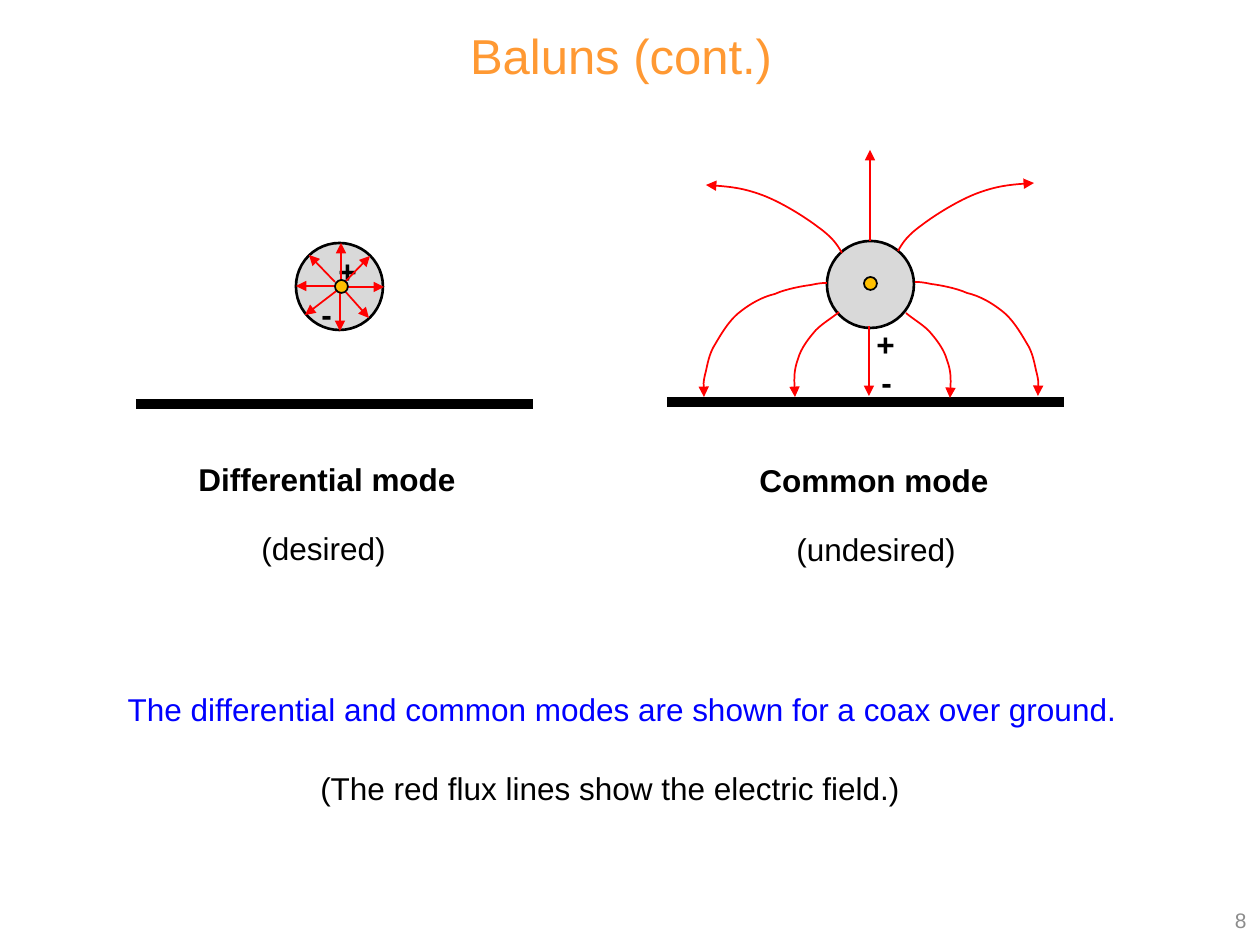
from pptx import Presentation
from pptx.dml.color import RGBColor
from pptx.enum import shapes, text
from pptx.oxml import ns, xmlchemy
from pptx.util import Emu, Pt

SCALE = 914400 / 126
COLORS = {
    "title": "FF9933", "number": "8C8C8C", "ink": "000000", "note": "0000FF",
    "shield": "D9D9D9", "core": "FFC000", "field": "FF0000",
}
GROUND_WIDTH, SHIELD_SIZE, CORE_SIZE = 397, 87, 13
SPOKES = [
    ((199, 39), (173, 12)), ((208, 47), (233, 75)),
    ((210, 38), (234, 13)), ((203, 46), (169, 72)),
    ((199, 43), (160, 43)), ((210, 44), (248, 44)),
    ((204, 49), (204, 88)), ((205, 38), (205, 0)),
]
INNER_CURVE = [
    (172, 162), (165, 168), (156, 173), (149, 180), (142, 188),
    (134, 198), (131, 209), (127, 220), (127, 233), (128, 247),
]
OUTER_CURVE = [
    (160, 133), (156, 133), (153, 133), (144, 135), (136, 136), (119, 139),
    (108, 144), (95, 147), (83, 154), (73, 162), (61, 171), (52, 188),
    (46, 198), (41, 208), (40, 218), (38, 225), (36, 234), (37, 241), (37, 247),
]
UPPER_CURVE = [
    (175, 103), (170, 94), (165, 87), (151, 77), (138, 67),
    (114, 52), (95, 45), (76, 38), (57, 36), (39, 35),
]
MIRRORED_CURVES = [(INNER_CURVE, 411, 1), (OUTER_CURVE, 408, -1), (UPPER_CURVE, 406, -2)]


def px(length):
    return Emu(round(length * SCALE))


def color(name):
    return RGBColor.from_string(COLORS[name])


def set_line(shape, name, width, arrow=False):
    shape.line.color.rgb = color(name)
    shape.line.width = Pt(width)
    if arrow:
        tail = xmlchemy.OxmlElement("a:tailEnd")
        tail.set("type", "triangle")
        shape.line._get_or_add_ln().append(tail)


def add_text(parent, box, words, ink="ink", size=18, bold=False, align="LEFT",
             wrap=False, anchor="TOP", fit="SHAPE_TO_FIT_TEXT"):
    frame = parent.add_textbox(*map(px, box)).text_frame
    frame_format = {
        "word_wrap": wrap,
        "auto_size": getattr(text.MSO_AUTO_SIZE, fit),
        "vertical_anchor": getattr(text.MSO_ANCHOR, anchor),
    }
    for name, value in frame_format.items():
        setattr(frame, name, value)
    para = frame.paragraphs[0]
    para.alignment = getattr(text.PP_ALIGN, align)
    span = para.add_run()
    span.text = words
    for name, value in {"name": "Arial", "size": Pt(size), "bold": bold}.items():
        setattr(span.font, name, value)
    span.font.color.rgb = color(ink)


def add_circle(parent, left, top, size, fill, width):
    circle = parent.add_shape(shapes.MSO_SHAPE.OVAL, *map(px, (left, top, size, size)))
    circle.shadow.inherit = False
    circle.fill.solid()
    circle.fill.fore_color.rgb = color(fill)
    set_line(circle, "ink", width)


def add_line(parent, start, end, name="field", width=1, arrow=True):
    line = parent.add_connector(shapes.MSO_CONNECTOR.STRAIGHT, *map(px, start + end))
    set_line(line, name, width, arrow)
    line._element.spPr.append(xmlchemy.OxmlElement("a:effectLst"))


def add_curve(parent, points):
    builder = parent.build_freeform(*points[0], scale=SCALE)
    builder.add_line_segments(points[1:], close=False)
    curve = builder.convert_to_shape()
    curve.shadow.inherit = False
    curve.fill.background()
    set_line(curve, "field", 1, arrow=True)
    segments = list(curve._element.iter(ns.qn("a:lnTo")))
    for first in range(0, len(segments), 3):
        bezier = xmlchemy.OxmlElement("a:cubicBezTo")
        segments[first].addprevious(bezier)
        for segment in segments[first:first + 3]:
            bezier.append(segment[0])
            segment.getparent().remove(segment)


def add_ground(parent, left, top):
    add_line(parent, (left, top), (left + GROUND_WIDTH, top), "ink", 6, arrow=False)


def add_signs(parent, plus, minus):
    add_text(parent, (*plus, 44, 50), "+", bold=True)
    add_text(parent, (*minus, 37, 50), "-", bold=True)


def add_captions(page, left, top, mode, mode_width, verdict, verdict_offset, verdict_width):
    add_text(page.shapes, (left, top, mode_width, 50), mode, bold=True)
    add_text(page.shapes, (left + verdict_offset, top + 69, verdict_width, 50), verdict)


def add_differential_mode(page, left, top):
    parent = page.shapes.add_group_shape().shapes
    add_ground(parent, left, top + 161)
    add_circle(parent, left + 160, top, SHIELD_SIZE, "shield", 1.5)
    add_signs(parent, (left + 190, top + 3), (left + 173, top + 46))
    for start, end in SPOKES:
        add_line(parent, (left + start[0], top + start[1]), (left + end[0], top + end[1]))
    add_circle(parent, left + 199, top + 37, CORE_SIZE, "core", 1)
    add_captions(page, left + 50, top + 211, "Differential mode", 285, "(desired)", 63, 151)


def add_common_mode(page, left, top):
    parent = page.shapes.add_group_shape().shapes
    add_ground(parent, left, top + 252)
    add_circle(parent, left + 160, top + 91, SHIELD_SIZE, "shield", 1.5)
    add_circle(parent, left + 197, top + 127, CORE_SIZE, "core", 1)
    add_signs(parent, (left + 197, top + 169), (left + 202, top + 207))
    add_line(parent, (left + 202, top + 176), (left + 202, top + 246))
    add_line(parent, (left + 203, top + 91), (left + 203, top))
    for points, mirror, drop in MIRRORED_CURVES:
        add_curve(parent, [(left + x, top + y) for x, y in points])
        add_curve(parent, [(left + mirror - x, top + y + drop) for x, y in points])
    add_captions(page, left + 80, top + 305, "Common mode", 266, "(undesired)", 37, 186)


def add_heading(page, left, top):
    add_text(page.shapes, (left, top, 1154, 72), "Baluns (cont.)", "title", 28,
             align="CENTER", wrap=True)


def add_notes(page, left, top):
    add_text(page.shapes, (left, top, 1050, 50),
             "The differential and common modes are shown for a coax over ground.",
             "note", align="CENTER")
    add_text(page.shapes, (left + 208, top + 79, 610, 50),
             "(The red flux lines show the electric field.)", align="CENTER")


def add_page_number(page, left, top):
    add_text(page.shapes, (left, top, 294, 50), "8", "number", 12,
             align="RIGHT", wrap=True, anchor="MIDDLE", fit="NONE")


def main():
    deck = Presentation()
    deck.slide_width, deck.slide_height = px(1260), px(945)
    page = deck.slides.add_slide(deck.slide_layouts[6])
    add_heading(page, 44, 19)
    add_page_number(page, 965, 895)
    add_differential_mode(page, 136, 243)
    add_common_mode(page, 667, 150)
    add_notes(page, 97, 684)
    deck.save("out.pptx")


if __name__ == "__main__":
    main()
